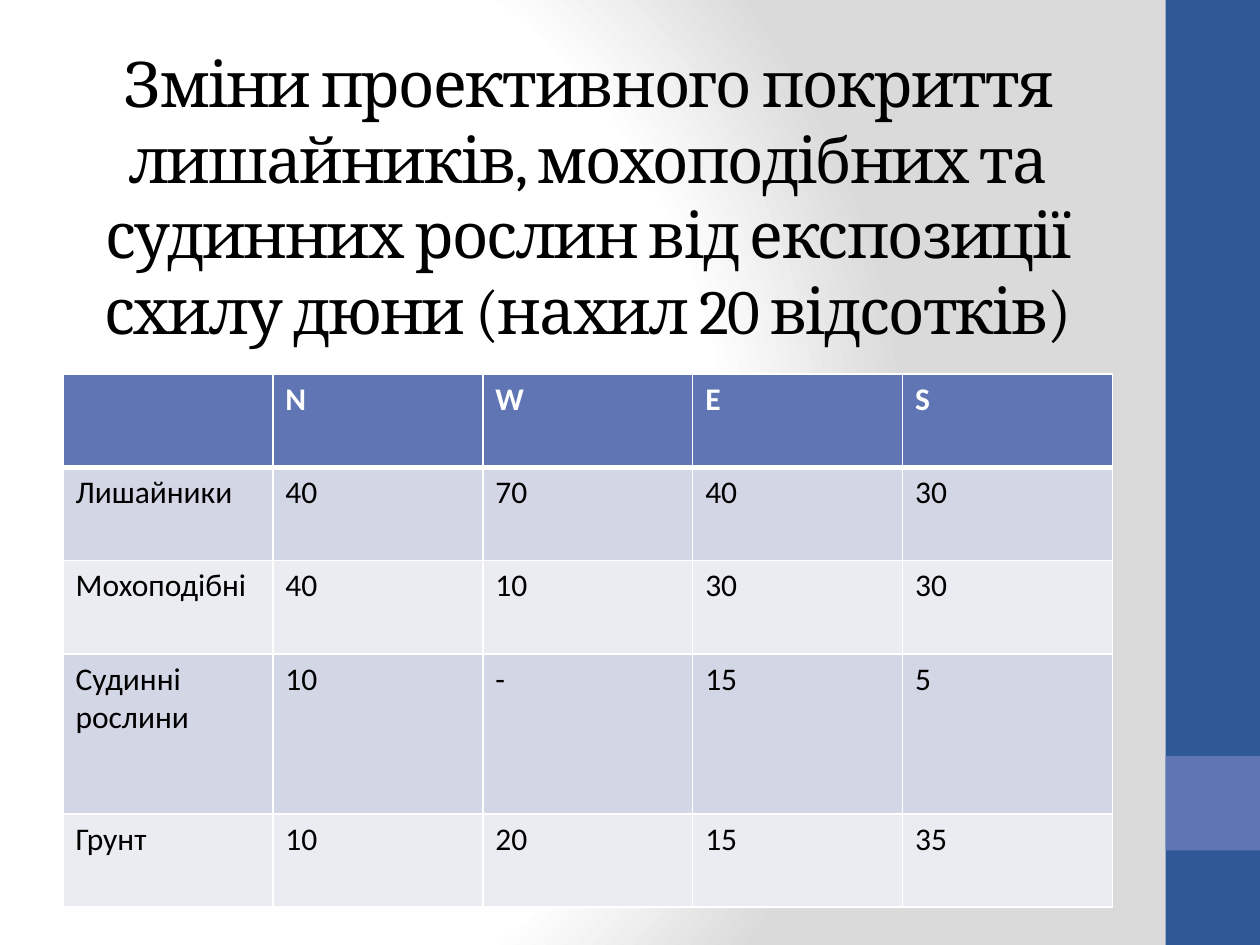
from lxml import etree
from pptx import Presentation
from pptx.dml.color import RGBColor
from pptx.enum.shapes import MSO_SHAPE
from pptx.enum.text import MSO_ANCHOR, MSO_AUTO_SIZE, PP_ALIGN
from pptx.oxml import parse_xml
from pptx.oxml.ns import nsdecls, qn
from pptx.util import Inches, Pt

RECT = MSO_SHAPE.RECTANGLE
MIDDLE, CENTER = MSO_ANCHOR.MIDDLE, PP_ALIGN.CENTER
NO_FIT = MSO_AUTO_SIZE.NONE

WIDTH, HEIGHT = 10, 7.5
LEFT, CONTENT_WIDTH = 0.05 * WIDTH, 0.83 * WIDTH + 0.03
BAND = 0.1 * HEIGHT  # width of the side band and side of its square

NAVY, BLUE = "2F5897", "6076B4"
BLACK, WHITE = "000000", "FFFFFF"
ROW_FILLS = ("D2D6E5", "EAECF2")

TITLE = ("Зміни проективного покриття лишайників, мохоподібних та "
         "судинних рослин від експозиції схилу дюни (нахил 20 відсотків)")
COVER_ROWS = [
    ["", "N", "W", "E", "S"],
    ["Лишайники", "40", "70", "40", "30"],
    ["Мохоподібні", "40", "10", "30", "30"],
    ["Судинні рослини", "10", "-", "15", "5"],
    ["Грунт", "10", "20", "15", "35"],
]
ROW_HEIGHTS = (0.74, 0.74, 0.74, 1.27, 0.74)


def color(value):
    return RGBColor.from_string(value)


def box(left, top, width, height):
    return [Inches(v) for v in (left, top, width, height)]


def style_font(font, name, size, fill, bold=False):
    font.name, font.size, font.bold = name, Pt(size), bold
    font.color.rgb = color(fill)


def add_background(s):
    stops = "".join(
        f'<a:gs pos="{pos * 1000}"><a:srgbClr val="{fill}"/></a:gs>'
        for pos, fill in ((0, WHITE), (75, WHITE), (100, "DADADA")))
    bg = parse_xml(
        f'<p:bg {nsdecls("p", "a")}><p:bgPr><a:gradFill rotWithShape="1">'
        f'<a:gsLst>{stops}</a:gsLst><a:path path="circle">'
        '<a:fillToRect l="20000" t="50000" r="100000" b="50000"/></a:path>'
        '</a:gradFill><a:effectLst/></p:bgPr></p:bg>')
    s.element.find(qn("p:cSld")).insert(0, bg)


def add_band(s, top, height, fill):
    shape = s.shapes.add_shape(RECT, *box(WIDTH - BAND, top, BAND, height))
    shape.shadow.inherit = False
    shape.fill.solid()
    shape.fill.fore_color.rgb = color(fill)
    shape.line.fill.background()


def add_title(s, text):
    title = s.shapes.title
    title.left, title.top, title.width, title.height = box(
        LEFT, 0.04 * HEIGHT, CONTENT_WIDTH, 2.51)
    tf = title.text_frame
    tf.text = text
    tf.word_wrap, tf.auto_size, tf.vertical_anchor = True, NO_FIT, MIDDLE
    p = tf.paragraphs[0]
    p.alignment = CENTER
    r = p.runs[0]
    style_font(r.font, "Cambria", 36, BLACK)
    r.font._element.set("spc", "-100")  # letter spacing of -1 pt


def set_borders(cell, bottom):
    props = cell._tc.get_or_add_tcPr()
    for i, (side, width) in enumerate(
            (("L", 1), ("R", 1), ("T", 1), ("B", bottom))):
        line = etree.Element(qn(f"a:ln{side}"), w=str(Pt(width)))
        fill = etree.SubElement(line, qn("a:solidFill"))
        etree.SubElement(fill, qn("a:srgbClr"), val=WHITE)
        props.insert(i, line)


def add_table(s, rows, heights):
    columns = len(rows[0])
    table = s.shapes.add_table(
        len(rows), columns,
        *box(LEFT, 2.97, CONTENT_WIDTH, sum(heights))).table
    for column in table.columns:
        column.width = Inches(CONTENT_WIDTH / columns)
    for i, (values, height) in enumerate(zip(rows, heights)):
        header = i == 0
        table.rows[i].height = Inches(height)
        for cell, value in zip(table.rows[i].cells, values):
            cell.text = value
            cell.fill.solid()
            cell.fill.fore_color.rgb = color(
                BLUE if header else ROW_FILLS[(i - 1) % 2])
            # The rule under the header is thick on both sides of the edge
            set_borders(cell, 3 if header else 1)
            if i == 1:
                cell._tc.tcPr.find(qn("a:lnT")).set("w", str(Pt(3)))
            style_font(cell.text_frame.paragraphs[0].font, "Calibri", 18,
                       WHITE if header else BLACK, header)
            for r in cell.text_frame.paragraphs[0].runs:
                style_font(r.font, "Calibri", 18,
                           WHITE if header else BLACK, header)


def main():
    prs = Presentation()
    prs.slide_width, prs.slide_height = Inches(WIDTH), Inches(HEIGHT)
    s = prs.slides.add_slide(prs.slide_layouts[5])  # title only

    # Background and side band
    add_background(s)
    add_band(s, 0, HEIGHT, NAVY)
    add_band(s, 0.8 * HEIGHT, BAND, BLUE)

    # Title and plant cover by slope exposure
    add_title(s, TITLE)
    add_table(s, COVER_ROWS, ROW_HEIGHTS)

    prs.save("out.pptx")


if __name__ == "__main__":
    main()
